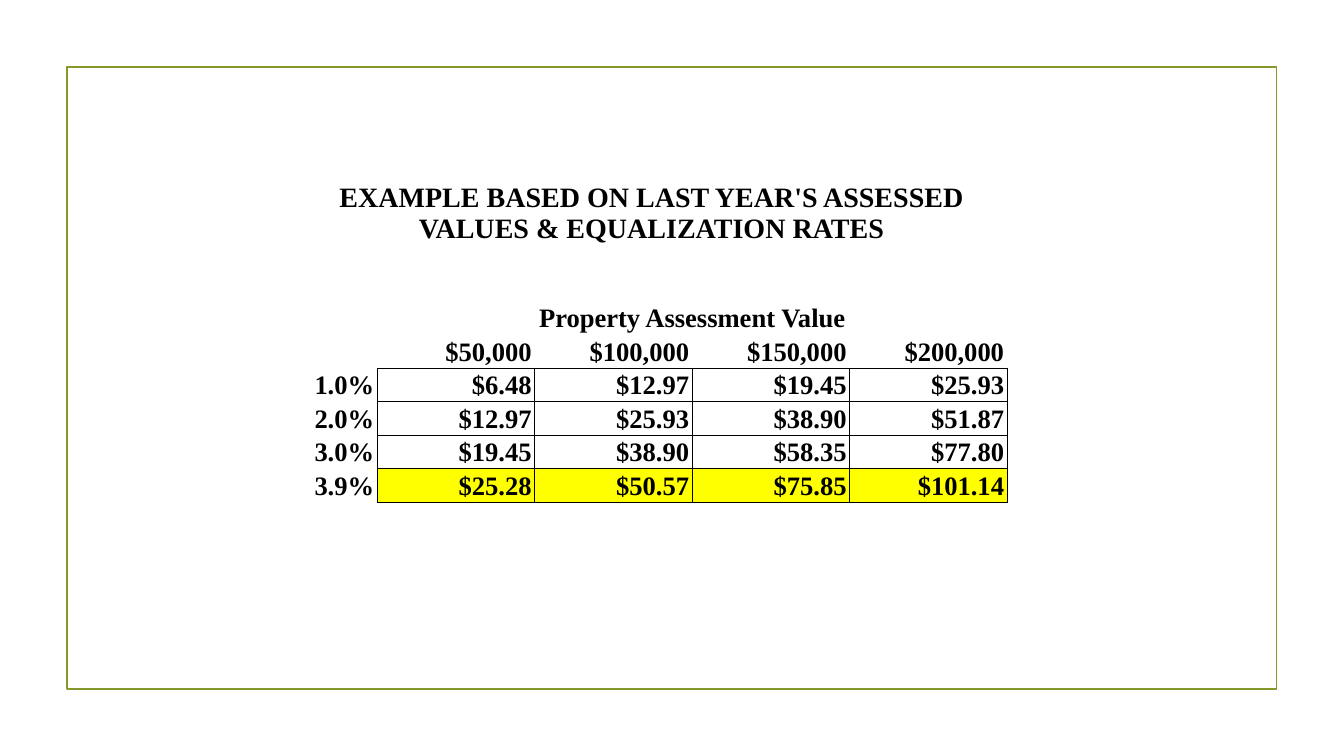
from typing import NamedTuple

from lxml import etree
from pptx import Presentation
from pptx import util as u
from pptx.dml.color import RGBColor
from pptx.enum import shapes, text
from pptx.oxml.ns import qn

BLACK = RGBColor(0x00, 0x00, 0x00)
OLIVE = RGBColor(0x83, 0x99, 0x2A)
YELLOW = RGBColor(0xFF, 0xFF, 0x00)
FONT = "Times New Roman"
EDGES = {"l": "a:lnL", "r": "a:lnR", "t": "a:lnT", "b": "a:lnB"}
COLUMNS = [10, 48] + [112.5] * 4
TITLE_HEIGHT, ROW_HEIGHT = 78.5, 23.9
HEADER_ROW, FIRST_RATE_ROW = 3, 4


class RateRow(NamedTuple):
    rate: str
    costs: list[str]
    highlighted: bool = False


TITLE = "EXAMPLE BASED ON LAST YEAR'S ASSESSED VALUES & EQUALIZATION RATES"
ASSESSMENTS = ["$50,000", "$100,000", "$150,000", "$200,000"]
RATES = [
    RateRow("1.0%", ["$6.48", "$12.97", "$19.45", "$25.93"]),
    RateRow("2.0%", ["$12.97", "$25.93", "$38.90", "$51.87"]),
    RateRow("3.0%", ["$19.45", "$38.90", "$58.35", "$77.80"]),
    RateRow("3.9%", ["$25.28", "$50.57", "$75.85", "$101.14"], True),
]


def set_borders(cell, sides: str) -> None:
    """Rule the named sides in black and leave the others open."""
    props = cell._tc.get_or_add_tcPr()
    for i, (side, tag) in enumerate(EDGES.items()):
        ln = etree.Element(qn(tag), w=str(u.Pt(0.75)))
        if side in sides:
            fill = etree.SubElement(ln, qn("a:solidFill"))
            etree.SubElement(fill, qn("a:srgbClr"), val=str(BLACK))
        else:
            etree.SubElement(ln, qn("a:noFill"))
        props.insert(i, ln)


def fill_cell(cell, content: str = "", align=text.PP_ALIGN.RIGHT, size: float = 19,
              sides: str = "", color: RGBColor | None = None) -> None:
    cell.text = content
    cell.margin_left = cell.margin_right = u.Pt(2.2)
    cell.margin_top = cell.margin_bottom = u.Pt(1)
    cell.vertical_anchor = text.MSO_ANCHOR.BOTTOM
    p = cell.text_frame.paragraphs[0]
    p.alignment = align
    p.font.name, p.font.size, p.font.bold = FONT, u.Pt(size), True
    p.font.color.rgb = BLACK
    if color is None:
        cell.fill.background()
    else:
        cell.fill.solid()
        cell.fill.fore_color.rgb = color
    set_borders(cell, sides)


def add_frame(s) -> None:
    sp = s.shapes.add_shape(shapes.MSO_SHAPE.RECTANGLE,
                            u.Pt(47.8), u.Pt(48), u.Pt(864), u.Pt(444))
    sp.shadow.inherit = False
    sp.fill.background()
    sp.line.color.rgb = OLIVE
    sp.line.width = u.Pt(1.25)


def add_rate_table(s) -> None:
    row_count = FIRST_RATE_ROW + len(RATES)
    height = TITLE_HEIGHT + ROW_HEIGHT * (row_count - 1)
    tbl = s.shapes.add_table(row_count, len(COLUMNS), u.Pt(211.5), u.Pt(113),
                             u.Pt(sum(COLUMNS)), u.Pt(height)).table
    tbl.first_row = tbl.horz_banding = False
    for column, width in zip(tbl.columns, COLUMNS):
        column.width = u.Pt(width)
    for i, row in enumerate(tbl.rows):
        row.height = u.Pt(ROW_HEIGHT if i else TITLE_HEIGHT)

    # Text of each cell, by row and column
    center = text.PP_ALIGN.CENTER
    contents = {
        (0, 0): dict(content=TITLE, align=center, size=20),
        (2, 2): dict(content="Property Assessment Value", align=center),
    }
    for c, value in enumerate(ASSESSMENTS, 2):
        contents[HEADER_ROW, c] = dict(content=value, sides="b")
    for r, rate in enumerate(RATES, FIRST_RATE_ROW):
        contents[r, 1] = dict(content=rate.rate, sides="r")
        for c, cost in enumerate(rate.costs, 2):
            contents[r, c] = dict(content=cost, sides="lrtb",
                                  color=YELLOW if rate.highlighted else None)
    for r in range(row_count):
        for c in range(len(COLUMNS)):
            fill_cell(tbl.cell(r, c), **contents.get((r, c), {}))

    # Spanning cells: title, value heading, margin beside the rates
    tbl.cell(0, 0).vertical_anchor = text.MSO_ANCHOR.MIDDLE
    tbl.cell(0, 0).merge(tbl.cell(0, 5))
    tbl.cell(2, 2).merge(tbl.cell(2, 5))
    tbl.cell(FIRST_RATE_ROW, 0).merge(tbl.cell(row_count - 1, 0))


def main() -> None:
    prs = Presentation()
    prs.slide_width, prs.slide_height = u.Pt(960), u.Pt(540)
    s = prs.slides.add_slide(prs.slide_layouts[6])
    add_frame(s)
    add_rate_table(s)
    prs.save("out.pptx")


if __name__ == "__main__":
    main()
